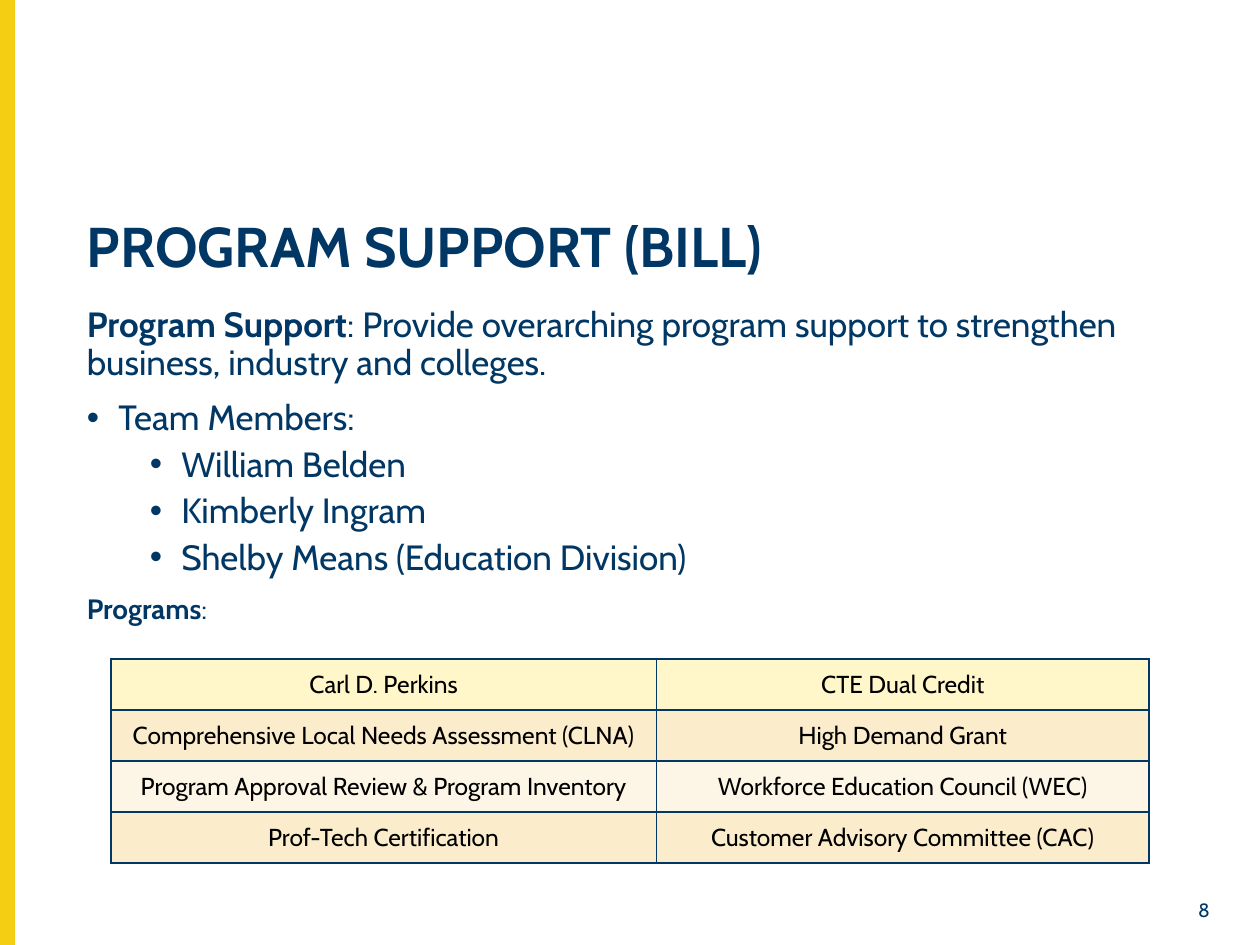
from dataclasses import dataclass

from lxml.etree import SubElement
from pptx import Presentation
from pptx.dml.color import RGBColor as Rgb
from pptx.enum.shapes import MSO_SHAPE as Shape
from pptx.enum.text import MSO_ANCHOR as Anchor, PP_ALIGN as Align
from pptx.oxml.ns import qn
from pptx.util import Inches, Length, Pt

HEX = {
    "navy": "003764", "gold": "F4CE12", "black": "000000",
    "head": "FFF6CA", "dark": "FBEDCC", "light": "FDF6E7",
}
FONT = "Cabin"
UNIT = 0.1  # grid step in inches: 100 columns by 75 rows


@dataclass
class Box:
    col: float
    row: float
    wide: float
    high: float

    def place(self) -> list[Length]:
        return [grid(n) for n in (self.col, self.row, self.wide, self.high)]


@dataclass
class Para:
    text: str
    lead: str = ""  # bold opening words
    size: int = 20
    level: int = 0
    bullet: bool = False
    before: int = 10


def grid(steps: float) -> Length:
    return Inches(steps * UNIT)


def color(name: str) -> Rgb:
    return Rgb.from_string(HEX[name])


def write(para, text: str, *, size: int, tint: str = "navy", bold: bool = False,
          align=None) -> None:
    run = para.add_run()
    run.text = text
    font = run.font
    font.name, font.size, font.bold = FONT, Pt(size), bold
    font.color.rgb = color(tint)
    if align is not None:
        para.alignment = align


def frame(slide, box: Box, anchor=Anchor.TOP):
    text = slide.shapes.add_textbox(*box.place()).text_frame
    text.word_wrap = True
    text.vertical_anchor = anchor
    return text


def bullet(para, level: int) -> None:
    props = para._p.get_or_add_pPr()
    props.set("marL", str(Inches(0.25 + 0.5 * level)))
    props.set("indent", str(Inches(-0.25)))
    SubElement(props, qn("a:buFont"), typeface="Arial")
    SubElement(props, qn("a:buChar"), char="•")


def fill_body(text, paras: list[Para]) -> None:
    for n, item in enumerate(paras):
        para = text.add_paragraph() if n else text.paragraphs[0]
        para.level = item.level
        if item.bullet:
            bullet(para, item.level)
        para.line_spacing = 0.9
        para.space_before = Pt(item.before if n else 0)
        if item.lead:
            write(para, item.lead, size=item.size, bold=True)
        write(para, item.text, size=item.size)


def border(cell) -> None:
    props = cell._tc.get_or_add_tcPr()
    for n, side in enumerate(("lnL", "lnR", "lnT", "lnB")):
        line = props.makeelement(qn(f"a:{side}"), {"w": str(Pt(1))})
        fill = SubElement(line, qn("a:solidFill"))
        SubElement(fill, qn("a:srgbClr"), val=HEX["navy"])
        props.insert(n, line)


def add_grid(slide, box: Box, cols: list[float], rows: list[tuple[str, ...]],
             tints: list[str]) -> None:
    table = slide.shapes.add_table(len(rows), len(cols), *box.place()).table
    for col, wide in zip(table.columns, cols):
        col.width = grid(wide)
    for r, (row, tint) in enumerate(zip(rows, tints)):
        table.rows[r].height = grid(box.high / len(rows))
        for c, text in enumerate(row):
            cell = table.cell(r, c)
            cell.vertical_anchor = Anchor.MIDDLE
            cell.fill.solid()
            cell.fill.fore_color.rgb = color(tint)
            border(cell)
            write(cell.text_frame.paragraphs[0], text, size=14, tint="black",
                  align=Align.CENTER)


def add_bar(slide, box: Box) -> None:
    bar = slide.shapes.add_shape(Shape.RECTANGLE, *box.place())
    bar.shadow.inherit = False
    bar.fill.solid()
    bar.fill.fore_color.rgb = bar.line.color.rgb = color("gold")
    bar.line.width = Pt(1)


TEAM = ["William Belden", "Kimberly Ingram", "Shelby Means (Education Division)"]
BODY = [
    Para(": Provide overarching program support to strengthen business, "
         "industry and colleges.", lead="Program Support"),
    Para("Team Members:", bullet=True),
    *(Para(name, level=1, bullet=True, before=5) for name in TEAM),
    Para(":", lead="Programs", size=16),
]
PROGRAMS = [
    ("Carl D. Perkins", "CTE Dual Credit"),
    ("Comprehensive Local Needs Assessment (CLNA)", "High Demand Grant"),
    ("Program Approval Review & Program Inventory",
     "Workforce Education Council (WEC)"),
    ("Prof-Tech Certification", "Customer Advisory Committee (CAC)"),
]


def main() -> None:
    deck = Presentation()
    deck.slide_width, deck.slide_height = grid(100), grid(75)
    slide = deck.slides.add_slide(deck.slide_layouts[6])

    add_bar(slide, Box(0, 0, 1.1, 75))
    title = frame(slide, Box(5.9, 17, 91.2, 5.5), Anchor.MIDDLE).paragraphs[0]
    title.line_spacing = 0.9
    write(title, "PROGRAM SUPPORT (BILL)", size=32, bold=True)
    fill_body(frame(slide, Box(5.9, 23.9, 91.2, 47)), BODY)
    page = frame(slide, Box(91.9, 70.9, 5.1, 2.6), Anchor.MIDDLE)
    write(page.paragraphs[0], "8", size=11, align=Align.RIGHT)
    add_grid(slide, Box(8.8, 52.3, 82.4, 16.2), [43.3, 39.1], PROGRAMS,
             ["head", "dark", "light", "dark"])

    deck.save("out.pptx")


if __name__ == "__main__":
    main()
